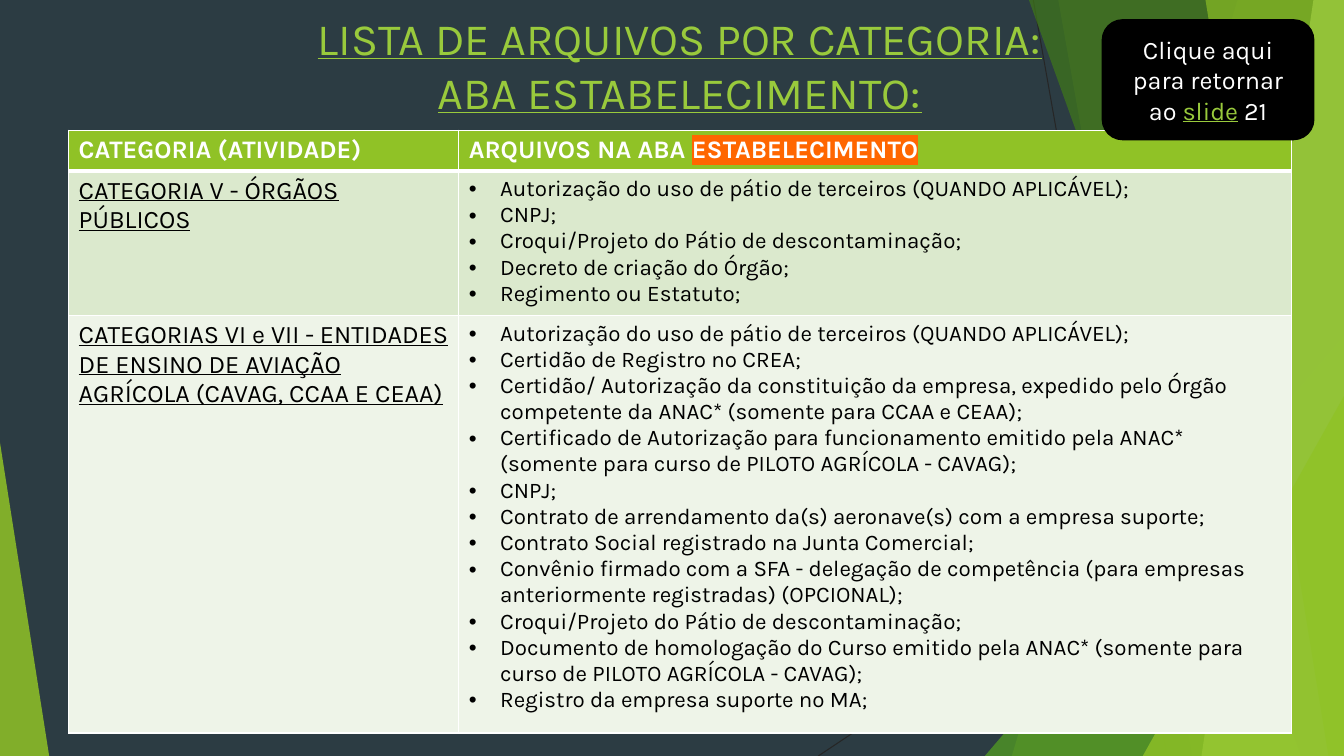
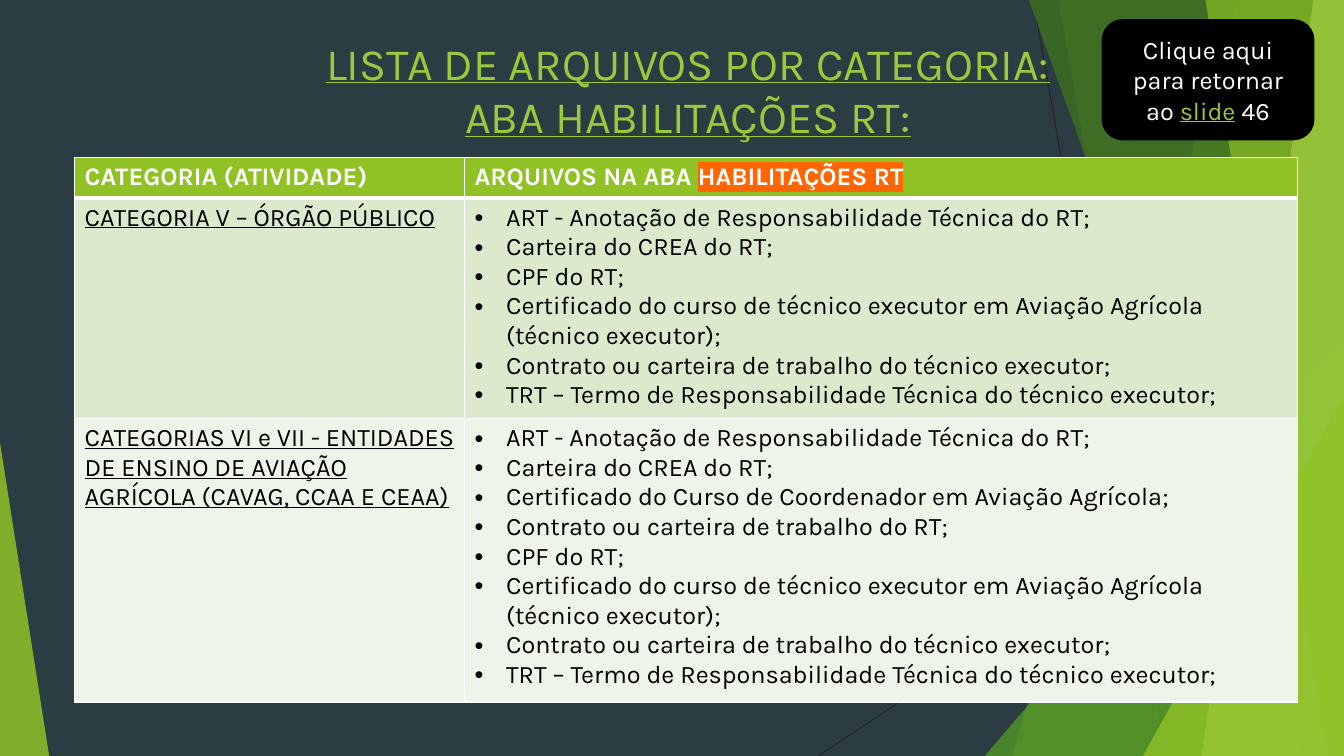
"""Builds two slides listing the files each category must send, tab by tab."""
from pptx import Presentation
from pptx.dml.color import RGBColor
from pptx.enum.shapes import MSO_CONNECTOR, MSO_SHAPE
from pptx.enum.text import MSO_ANCHOR, MSO_AUTO_SIZE, PP_ALIGN
from pptx.oxml.ns import qn
from pptx.util import Cm, Pt
from lxml.etree import SubElement

FONT = "Karla"
NIGHT = RGBColor(0x2C, 0x3C, 0x43)
LIME = RGBColor(0x90, 0xC2, 0x26)
GRASS = RGBColor(0x54, 0xA0, 0x21)
FOREST = RGBColor(0x3F, 0x78, 0x19)
PALE_LIME = RGBColor(0xC0, 0xE4, 0x74)
TITLE_GREEN = RGBColor(0x99, 0xCA, 0x3C)
CHARCOAL = RGBColor(0x26, 0x26, 0x26)
ORANGE = RGBColor(0xFF, 0x66, 0x00)
BLACK = RGBColor(0, 0, 0)
WHITE = RGBColor(0xFF, 0xFF, 0xFF)
ROW_FILLS = (LIME, RGBColor(0xDB, 0xE9, 0xCD), RGBColor(0xEE, 0xF4, 0xE8))

SLIDE_WIDTH, SLIDE_HEIGHT = 33.87, 19.05
COLUMN_WIDTHS = (9.83, 20.98)
BULLET_INDENT = Cm(0.79)

SCHOOLS = "CATEGORIAS VI e VII - ENTIDADES DE ENSINO DE AVIAÇÃO AGRÍCOLA (CAVAG, CCAA E CEAA)"
YARD_PERMIT = "Autorização do uso de pátio de terceiros (QUANDO APLICÁVEL);"
YARD_PLAN = "Croqui/Projeto do Pátio de descontaminação;"
ART = "ART - Anotação de Responsabilidade Técnica do RT;"
CREA_CARD = "Carteira do CREA do RT;"
CPF = "CPF do RT;"
EXECUTOR_FILES = (
    "Certificado do curso de técnico executor em Aviação Agrícola (técnico executor);",
    "Contrato ou carteira de trabalho do técnico executor;",
    "TRT – Termo de Responsabilidade Técnica do técnico executor;",
)
ESTABLISHMENT = (
    ("CATEGORIA V - ÓRGÃOS PÚBLICOS", (
        YARD_PERMIT,
        "CNPJ;",
        YARD_PLAN,
        "Decreto de criação do Órgão;",
        "Regimento ou Estatuto;",
    )),
    (SCHOOLS, (
        YARD_PERMIT,
        "Certidão de Registro no CREA;",
        "Certidão/ Autorização da constituição da empresa, expedido pelo Órgão "
        "competente da ANAC* (somente para CCAA e CEAA);",
        "Certificado de Autorização para funcionamento emitido pela ANAC* "
        "(somente para curso de PILOTO AGRÍCOLA - CAVAG);",
        "CNPJ;",
        "Contrato de arrendamento da(s) aeronave(s) com a empresa suporte;",
        "Contrato Social registrado na Junta Comercial;",
        "Convênio firmado com a SFA - delegação de competência (para empresas "
        "anteriormente registradas) (OPCIONAL);",
        YARD_PLAN,
        "Documento de homologação do Curso emitido pela ANAC* (somente para "
        "curso de PILOTO AGRÍCOLA - CAVAG);",
        "Registro da empresa suporte no MA;",
    )),
)
QUALIFICATIONS = (
    ("CATEGORIA V – ÓRGÃO PÚBLICO", (ART, CREA_CARD, CPF, *EXECUTOR_FILES)),
    (SCHOOLS, (
        ART,
        CREA_CARD,
        "Certificado do Curso de Coordenador em Aviação Agrícola;",
        "Contrato ou carteira de trabalho do RT;",
        CPF,
        *EXECUTOR_FILES,
    )),
)


def add_text(paragraph, text, size=18, color=BLACK, bold=False, underline=False, highlight=None):
    """Append a formatted run to a paragraph."""
    run = paragraph.add_run()
    run.text = text
    font = run.font
    font.name, font.size, font.bold, font.underline = FONT, Pt(size), bold, underline
    font.color.rgb = color
    if highlight is not None:
        properties = run._r.get_or_add_rPr()
        marker = SubElement(properties, qn("a:highlight"))
        SubElement(marker, qn("a:srgbClr"), val=str(highlight))
        properties.find(qn("a:latin")).addprevious(marker)


def next_paragraph(frame):
    """Return the first paragraph while it is empty, else a new one."""
    first = frame.paragraphs[0]
    return frame.add_paragraph() if first.runs else first


def add_bullet(frame, text, size):
    """Append a bulleted paragraph with a hanging indent."""
    paragraph = next_paragraph(frame)
    properties = paragraph._p.get_or_add_pPr()
    properties.set("marL", str(BULLET_INDENT))
    properties.set("indent", str(-BULLET_INDENT))
    SubElement(properties, qn("a:buFont"), typeface="Arial")
    SubElement(properties, qn("a:buChar"), char="•")
    add_text(paragraph, text, size=size)


def tint(shape, color, opacity):
    """Give a shape a flat translucent fill, without outline or shadow."""
    shape.shadow.inherit = False
    shape.fill.solid()
    shape.fill.fore_color.rgb = color
    shape.line.fill.background()
    tone = shape.element.spPr.xpath("./a:solidFill/a:srgbClr")[0]
    SubElement(tone, qn("a:alpha"), val=str(opacity * 1000))
    return shape


def add_ray(slide, start, end):
    """Draw a thin dark line."""
    ray = slide.shapes.add_connector(MSO_CONNECTOR.STRAIGHT, *map(Cm, start + end))
    ray.line.color.rgb = CHARCOAL
    ray.line.width = Pt(0.75)
    SubElement(ray.element.spPr, qn("a:effectLst"))
    return ray


def add_panel(slide, top_x, bottom_x, color, opacity):
    """Draw a slanted panel reaching the right edge of the slide."""
    right, bottom = Cm(SLIDE_WIDTH), Cm(SLIDE_HEIGHT)
    outline = slide.shapes.build_freeform(Cm(top_x), 0)
    outline.add_line_segments([(right, 0), (right, bottom), (Cm(bottom_x), bottom)], close=True)
    return tint(outline.convert_to_shape(), color, opacity)


def add_corner(slide, left, top, width, apex, color, opacity):
    """Draw a triangle standing on the bottom edge of the slide."""
    box = map(Cm, (left, top, width, SLIDE_HEIGHT - top))
    corner = slide.shapes.add_shape(MSO_SHAPE.ISOSCELES_TRIANGLE, *box)
    corner.adjustments[0] = apex
    return tint(corner, color, opacity)


def share_backdrop(slide):
    """Draw the facets and move them to the layout all slides share."""
    facets = (
        add_ray(slide, (26.04, 0), (29.41, SLIDE_HEIGHT)),
        add_ray(slide, (SLIDE_WIDTH, 10.24), (20.62, SLIDE_HEIGHT)),
        add_panel(slide, 31.19, 25.5, LIME, 30),
        add_panel(slide, 26.67, 30.05, LIME, 20),
        add_corner(slide, 24.82, 8.46, 9.05, 1, GRASS, 72),
        add_panel(slide, 25.93, 32.79, FOREST, 70),
        add_panel(slide, 33.1, 30.28, PALE_LIME, 70),
        add_panel(slide, 30.38, 33.48, LIME, 65),
        add_corner(slide, 28.8, 9.98, 5.07, 1, LIME, 80),
        add_corner(slide, 0, 11.15, 1.24, 0, LIME, 85),
    )
    for facet in facets:
        slide.slide_layout.shapes.element.append(facet.element)


def set_title(slide, tab, left, top):
    """Place and write the two-line title."""
    title = slide.shapes.title
    title.left, title.top, title.width, title.height = map(Cm, (left, top, 29.34, 5.74))
    frame = title.text_frame
    frame.word_wrap = True
    frame.auto_size = MSO_AUTO_SIZE.NONE
    frame.vertical_anchor = MSO_ANCHOR.TOP
    for line in ("LISTA DE ARQUIVOS POR CATEGORIA:", f"ABA {tab}:"):
        paragraph = next_paragraph(frame)
        paragraph.alignment = PP_ALIGN.CENTER
        add_text(paragraph, line, size=32, color=TITLE_GREEN, underline=True)


def style_cell(cell, row):
    """Set the white borders and the fill of a cell by its row."""
    properties = cell._tc.get_or_add_tcPr()
    widths = {"L": 1, "R": 1, "T": 3 if row == 1 else 1, "B": 3 if row == 0 else 1}
    for side, width in widths.items():
        border = SubElement(properties, qn(f"a:ln{side}"), w=str(Pt(width)))
        fill = SubElement(border, qn("a:solidFill"))
        SubElement(fill, qn("a:srgbClr"), val=str(WHITE))
    cell.fill.solid()
    cell.fill.fore_color.rgb = ROW_FILLS[row]


def add_file_table(slide, tab, categories, left, top, heights, size):
    """Add the table of categories and their files."""
    box = map(Cm, (left, top, sum(COLUMN_WIDTHS), sum(heights)))
    table = slide.shapes.add_table(len(heights), len(COLUMN_WIDTHS), *box).table
    table.horz_banding = False
    for column, width in zip(table.columns, COLUMN_WIDTHS):
        column.width = Cm(width)
    for index, (row, height) in enumerate(zip(table.rows, heights)):
        row.height = Cm(height)
        for cell in row.cells:
            style_cell(cell, index)

    category_head, files_head = (cell.text_frame.paragraphs[0] for cell in table.rows[0].cells)
    add_text(category_head, "CATEGORIA (ATIVIDADE)", color=WHITE, bold=True)
    add_text(files_head, "ARQUIVOS NA ABA ", color=WHITE, bold=True)
    add_text(files_head, tab, color=WHITE, bold=True, highlight=ORANGE)

    for index, (category, files) in enumerate(categories, start=1):
        name_cell, files_cell = table.rows[index].cells
        add_text(name_cell.text_frame.paragraphs[0], category, underline=True)
        for file_name in files:
            add_bullet(files_cell.text_frame, file_name, size)


def add_return_button(slide, number):
    """Add the black button naming the slide to return to."""
    box = map(Cm, (27.79, 0.51, 5.31, 3))
    button = slide.shapes.add_shape(MSO_SHAPE.ROUNDED_RECTANGLE, *box)
    button.shadow.inherit = False
    button.fill.solid()
    button.fill.fore_color.rgb = BLACK
    button.line.color.rgb = BLACK
    button.line.width = Pt(1.5)
    frame = button.text_frame
    frame.word_wrap = True
    frame.vertical_anchor = MSO_ANCHOR.MIDDLE
    paragraph = frame.paragraphs[0]
    paragraph.alignment = PP_ALIGN.CENTER
    add_text(paragraph, "Clique aqui para retornar ao ", color=WHITE)
    add_text(paragraph, "slide", color=TITLE_GREEN, underline=True)
    add_text(paragraph, f" {number}", color=WHITE)


def main():
    """Build and save the presentation."""
    deck = Presentation()
    deck.slide_width, deck.slide_height = Cm(SLIDE_WIDTH), Cm(SLIDE_HEIGHT)
    background = deck.slide_master.background.fill
    background.solid()
    background.fore_color.rgb = NIGHT
    title_only = deck.slide_layouts[5]

    establishment = deck.slides.add_slide(title_only)
    share_backdrop(establishment)
    set_title(establishment, "ESTABELECIMENTO", 2.46, 0.15)
    add_file_table(establishment, "ESTABELECIMENTO", ESTABLISHMENT,
                   1.73, 3.28, (1.03, 3.64, 10.52), size=16)
    add_return_button(establishment, 21)

    qualifications = deck.slides.add_slide(title_only)
    set_title(qualifications, "HABILITAÇÕES RT", 2.67, 0.76)
    add_file_table(qualifications, "HABILITAÇÕES RT", QUALIFICATIONS,
                   1.88, 3.96, (1.03, 5.56, 7.14), size=18)
    add_return_button(qualifications, 46)

    deck.save("out.pptx")


if __name__ == "__main__":
    main()
